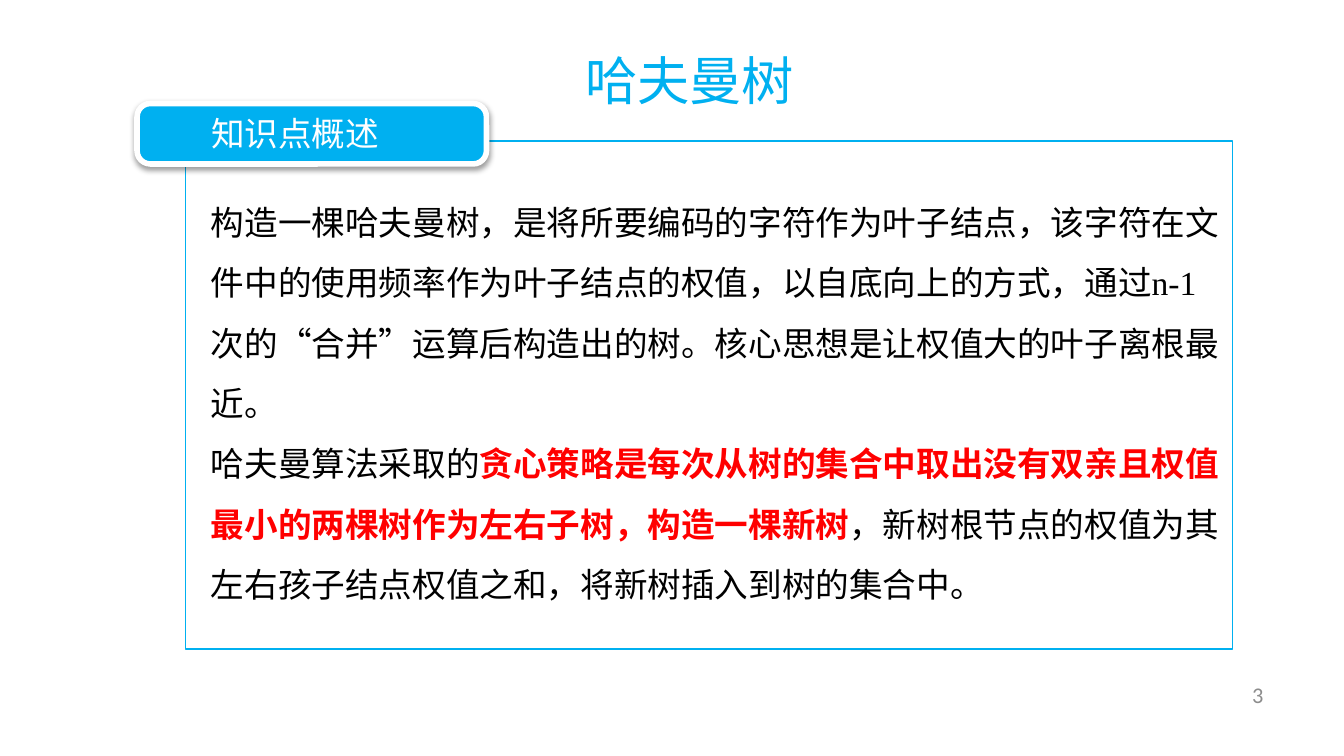
from lxml import etree
from pptx import Presentation
from pptx.dml.color import RGBColor
from pptx.enum.shapes import MSO_SHAPE
from pptx.enum.text import MSO_ANCHOR, PP_ALIGN
from pptx.oxml import parse_xml
from pptx.oxml.ns import nsdecls, qn
from pptx.util import Inches, Pt

COLORS = {"accent": "00B0F0", "white": "FFFFFF", "black": "000000",
          "emphasis": "FF0000", "number": "8C8C8C"}
CJK = "Noto Sans CJK SC"

BODY = [
    [("构造一棵哈夫曼树，是将所要编码的字符作为叶子结点，该字符在文件中的使用频率作为"
      "叶子结点的权值，以自底向上的方式，通过n-1次的“合并”运算后构造出的树。"
      "核心思想是让权值大的叶子离根最近。", False)],
    [("哈夫曼算法采取的", False),
     ("贪心策略是每次从树的集合中取出没有双亲且权值最小的两棵树作为左右子树，"
      "构造一棵新树", True),
     ("，新树根节点的权值为其左右孩子结点权值之和，将新树插入到树的集合中。", False)],
]


def rgb(name):
    return RGBColor.from_string(COLORS[name])


def add_run(p, text, color, size, font=CJK, bold=False):
    r = p.add_run()
    r.text = text
    for key, value in {"size": Pt(size), "name": font, "bold": bold}.items():
        setattr(r.font, key, value)
    r.font.color.rgb = rgb(color)
    rPr = r.font._element
    rPr.set("lang", "zh-CN")
    etree.SubElement(rPr, qn("a:ea")).set("typeface", CJK)


def add_text(s, box, paragraphs, align=PP_ALIGN.LEFT, spacing=1.0,
             anchor=MSO_ANCHOR.TOP):
    """Each paragraph is a list of add_run keyword sets."""
    tf = s.shapes.add_textbox(*map(Inches, box)).text_frame
    tf.word_wrap = True
    tf.vertical_anchor = anchor
    for i, runs in enumerate(paragraphs):
        p = tf.add_paragraph() if i else tf.paragraphs[0]
        p.alignment, p.line_spacing = align, spacing
        for run in runs:
            add_run(p, **run)


def add_panel(s, kind, box, fill, line, width):
    shape = s.shapes.add_shape(kind, *map(Inches, box))
    shape.shadow.inherit = False
    shape.fill.solid()
    shape.fill.fore_color.rgb = rgb(fill)
    shape.line.color.rgb = rgb(line)
    shape.line.width = Pt(width)
    return shape


def add_title(s, box):
    add_text(s, box, [[dict(text="哈夫曼树", color="accent", size=28)]],
             PP_ALIGN.CENTER, 1.35)


def add_overview_frame(s, box):
    x, y, w, h = box
    frame = add_panel(s, MSO_SHAPE.RECTANGLE, box, "white", "accent", 0.75)
    fill_color = frame._element.spPr.find(qn("a:solidFill"))[0]
    etree.SubElement(fill_color, qn("a:alpha")).set("val", "90000")
    add_tab(s, (x - 0.36, y - 0.28, 2.6, 0.45))
    paragraphs = [[dict(text=text, color="emphasis" if strong else "black", size=18,
                        font="Times New Roman", bold=strong)
                   for text, strong in runs] for runs in BODY]
    add_text(s, (x + 0.09, y + 0.25, w - 0.08, h - 0.5), paragraphs, spacing=1.5)


def add_tab(s, box):
    x, y, w, h = box
    tab = add_panel(s, MSO_SHAPE.ROUNDED_RECTANGLE, box, "accent", "white", 3)
    tab.adjustments[0] = 0.22
    spPr = tab._element.spPr
    spPr.replace(spPr.find(qn("a:effectLst")), parse_xml(
        f'<a:effectLst {nsdecls("a")}>'
        f'<a:outerShdw blurRad="{Pt(3.1)}" dist="{Pt(1.6)}" dir="5400000" rotWithShape="0">'
        f'<a:srgbClr val="{COLORS["black"]}"><a:alpha val="38000"/></a:srgbClr>'
        '</a:outerShdw></a:effectLst>'))
    add_text(s, (x + 0.02, y + 0.02, w - 0.29, h - 0.05),
             [[dict(text="知识点概述", color="white", size=18)]], PP_ALIGN.CENTER)


def add_page_number(s, box):
    add_text(s, box, [[dict(text="3", color="number", size=12, font="Calibri")]],
             PP_ALIGN.RIGHT, anchor=MSO_ANCHOR.MIDDLE)


def main():
    prs = Presentation()
    prs.slide_width, prs.slide_height = Inches(10), Inches(10 * 9 / 16)
    s = prs.slides.add_slide(prs.slide_layouts[6])
    add_page_number(s, (7.17, 5.02, 2.33, 0.3))
    add_title(s, (3.48, 0.15, 3.3, 0.74))
    add_overview_frame(s, (1.38, 1.05, 7.79, 3.78))
    prs.save("out.pptx")


if __name__ == "__main__":
    main()
